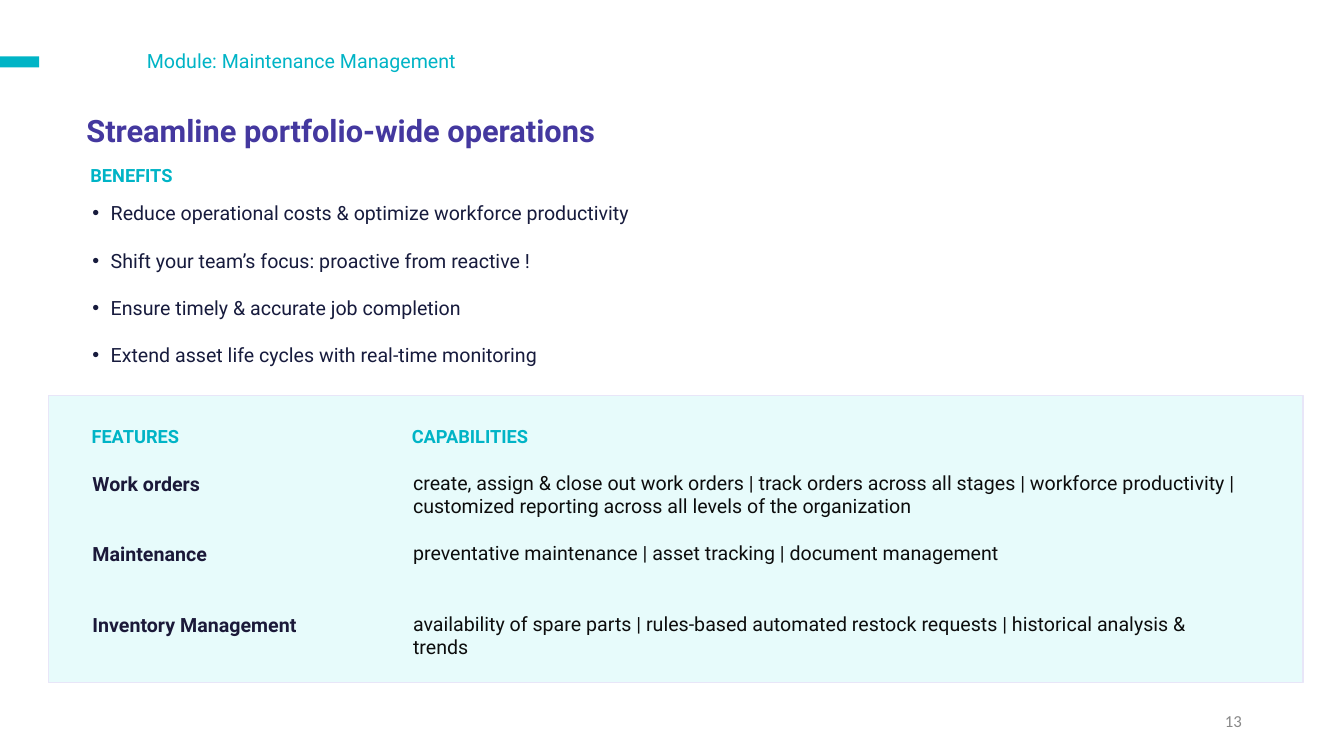
"""Build the Maintenance Management module slide with benefits, features and capabilities."""
from lxml import etree
from pptx import Presentation
from pptx.dml.color import RGBColor
from pptx.enum.shapes import MSO_SHAPE
from pptx.enum.text import MSO_ANCHOR, PP_ALIGN
from pptx.oxml.ns import qn
from pptx.util import Cm, Pt

RECTANGLE = MSO_SHAPE.RECTANGLE
MIDDLE = MSO_ANCHOR.MIDDLE
LEFT, RIGHT = PP_ALIGN.LEFT, PP_ALIGN.RIGHT

TEAL = RGBColor(0x00, 0xB4, 0xC6)
PURPLE = RGBColor(0x44, 0x38, 0x9F)
NAVY = RGBColor(0x17, 0x1B, 0x3D)
INDIGO = RGBColor(0x1B, 0x19, 0x39)
BLACK = RGBColor(0x0D, 0x0D, 0x0D)
GREY = RGBColor(0x88, 0x88, 0x88)
MINT = RGBColor(0xE7, 0xFB, 0xFB)
LAVENDER = RGBColor(0xE8, 0xE6, 0xF8)

LINE_GAP = 16.8

prs = Presentation()
prs.slide_width, prs.slide_height = Cm(33.87), Cm(19.05)
slide = prs.slides.add_slide(prs.slide_layouts[6])


def add_block(left, top, width, height, color):
    block = slide.shapes.add_shape(RECTANGLE, Cm(left), Cm(top), Cm(width), Cm(height))
    block.shadow.inherit = False
    block.fill.solid()
    block.fill.fore_color.rgb = color
    block.line.fill.background()
    return block


def add_text(box, lines, size, color, bold=False, font="Roboto", gaps=(), align=LEFT):
    frame = slide.shapes.add_textbox(*[Cm(length) for length in box]).text_frame
    frame.word_wrap = True
    for index, line in enumerate(lines):
        paragraph = frame.add_paragraph() if index else frame.paragraphs[0]
        paragraph.alignment = align
        if index:
            paragraph.space_before = Pt(gaps[index - 1])
        run = paragraph.add_run()
        run.text = line
        run.font.name = font
        run.font.size = Pt(size)
        run.font.bold = bold
        run.font.color.rgb = color
    return frame


page_number = add_text((23.93, 17.65, 7.62, 1.02), ["13"], 12, GREY, font="Calibri", align=RIGHT)
page_number.vertical_anchor = MIDDLE

add_block(0, 1.42, 0.99, 0.28, TEAL)
feature_panel = add_block(1.22, 9.96, 31.62, 7.24, MINT)
feature_panel.line.color.rgb = LAVENDER
feature_panel.line.width = Pt(1)

add_text((3.45, 1.12, 9.96, 0.86), ["Module: Maintenance Management"], 14, TEAL)
add_text((1.93, 2.69, 19.96, 1.19), ["Streamline portfolio-wide operations"], 22, PURPLE, bold=True)

for heading, left, top in [
    ("BENEFITS", 2.03, 4.01),
    ("FEATURES", 2.06, 10.59),
    ("CAPABILITIES", 10.13, 10.59),
]:
    add_text((left, top, 4.32, 0.81), [heading], 13, TEAL, bold=True)

benefits = add_text(
    (1.75, 4.95, 27.41, 4.45),
    [
        "Reduce operational costs & optimize workforce productivity",
        "Shift your team’s focus: proactive from reactive !",
        "Ensure timely & accurate job completion",
        "Extend asset life cycles with real-time monitoring",
    ],
    14, NAVY, gaps=[LINE_GAP] * 3,
)
for benefit in benefits.paragraphs:
    properties = benefit._p.get_or_add_pPr()
    properties.set("marL", str(Cm(0.79)))
    properties.set("indent", str(Cm(-0.46)))
    bullet_color = etree.SubElement(properties, qn("a:buClr"))
    etree.SubElement(bullet_color, qn("a:srgbClr"), val=str(NAVY))
    etree.SubElement(properties, qn("a:buFont"), typeface="Arial")
    etree.SubElement(properties, qn("a:buChar"), char="•")

add_text(
    (2.08, 11.76, 6.35, 5.05),
    ["Work orders", "Maintenance", "Inventory Management"],
    14, INDIGO, bold=True, gaps=[2 * LINE_GAP] * 2,
)
add_text(
    (10.16, 11.73, 21.34, 5.05),
    [
        "create, assign & close out work orders | track orders across all stages | "
        "workforce productivity | customized reporting across all levels of the organization",
        "preventative maintenance | asset tracking | document management",
        "availability of spare parts | rules-based automated restock requests | "
        "historical analysis & trends",
    ],
    14, BLACK, gaps=[LINE_GAP, 2 * LINE_GAP],
)

prs.save("out.pptx")
